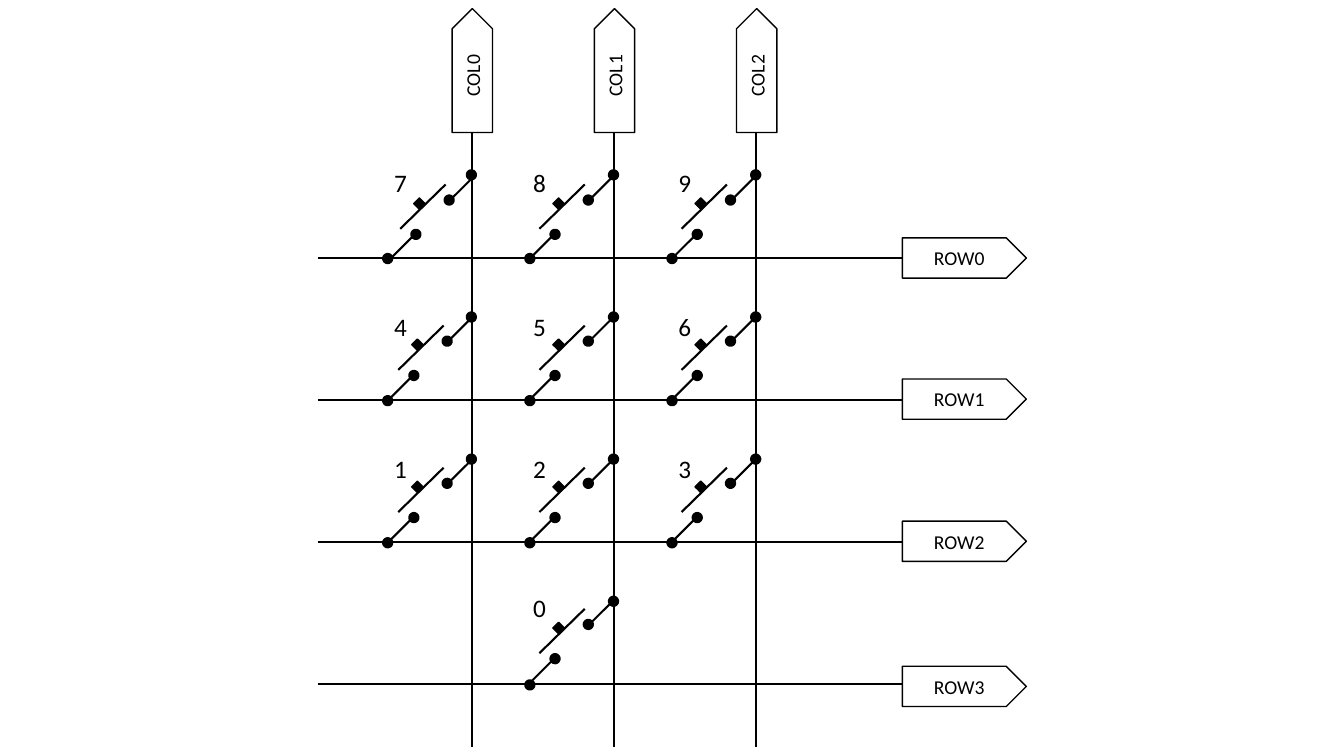
"""Build a slide with the wiring of a ten-key keypad matrix."""
import pptx
import pptx.dml.color
import pptx.enum.shapes
import pptx.enum.text
import pptx.oxml.ns
import pptx.util

PX = 9144
COLORS = {"ink": "000000"}
PITCH = 141
SWITCH_PITCH = 140.4
KEY_ROWS = ["789", "456", "123", " 0 "]
KEY_NUDGES = {"7": 3, "4": 1, "1": 1}
COLUMN_XS = [468 + PITCH * column for column in range(3)]
ROW_YS = [256 + PITCH * row for row in range(4)]
DIGIT_XS = [381, 519, 663]
DIGIT_YS = [161, 304, 445, 583]
ROW_TAG_YS = [236, 376, 517, 661]
ROW_START, ROW_END = 315, 895
COLUMN_START, COLUMN_END = 132, 741
TAG_WIDTH, TAG_HEIGHT = 123, 40
DOT, PLUNGER = 5, 8

ink = pptx.dml.color.RGBColor.from_string(COLORS["ink"])
shape_types = pptx.enum.shapes.MSO_SHAPE
deck = pptx.Presentation()
deck.slide_width, deck.slide_height = 1333 * PX, 750 * PX
slide = deck.slides.add_slide(deck.slide_layouts[6])


def write(text, frame, size, align, anchor):
    frame.word_wrap = False
    frame.vertical_anchor = anchor
    paragraph = frame.paragraphs[0]
    paragraph.alignment = align
    run = paragraph.add_run()
    run.text = text
    run.font.name = "Calibri"
    run.font.size = pptx.util.Pt(size)
    run.font.color.rgb = ink


def add_part(kind, left, top, width, height, line_width, rotation=0, filled=True):
    part = slide.shapes.add_shape(kind, left * PX, top * PX, width * PX, height * PX)
    part.shadow.inherit = False
    part.rotation = rotation
    part.line.color.rgb = ink
    part.line.width = pptx.util.Pt(line_width)
    if filled:
        part.fill.solid()
        part.fill.fore_color.rgb = ink
    else:
        part.fill.background()
    return part


wires = [(ROW_START, y, ROW_END, y) for y in ROW_YS]
wires += [(x, COLUMN_START, x, COLUMN_END) for x in COLUMN_XS]
dots, plungers, digits = [], [], []
for row, keys in enumerate(KEY_ROWS):
    for column, key in enumerate(keys):
        if key == " ":
            continue
        node_x, node_y = COLUMN_XS[column], ROW_YS[row]
        x = node_x + KEY_NUDGES.get(key, 0)
        y = ROW_YS[0] + round(SWITCH_PITCH * row)
        wires += [
            (x, y - 82, x - 25, y - 57),
            (x - 59, y - 24, x - 84, y + 1),
            (x - 29, y - 73, x - 74, y - 29),
        ]
        dots += [
            (x - 61, y - 26),
            (x - 28, y - 60),
            (node_x - 3, node_y - 85),
            (node_x - 86, node_y - 2),
        ]
        plungers.append((x - 59, y - 58))
        digits.append((key, DIGIT_XS[column], DIGIT_YS[row]))

for ends in wires:
    wire = slide.shapes.add_connector(
        pptx.enum.shapes.MSO_CONNECTOR.STRAIGHT, *[end * PX for end in ends]
    )
    wire.line.color.rgb = ink
    wire.line.width = pptx.util.Pt(1.5)
    properties = wire.element.find(pptx.oxml.ns.qn("p:spPr"))
    properties.append(pptx.oxml.parse_xml(
        f'<a:effectLst {pptx.oxml.ns.nsdecls("a")}/>'
    ))

for left, top in dots:
    add_part(shape_types.OVAL, left, top, DOT, DOT, 4.5)
for left, top in plungers:
    add_part(shape_types.RECTANGLE, left, top, PLUNGER, PLUNGER, 1, rotation=45)

tags = [(f"ROW{row}", ROW_END, y, 0) for row, y in enumerate(ROW_TAG_YS)]
tags += [(f"COL{column}", x - 61, 50, 270) for column, x in enumerate(COLUMN_XS)]
for label, left, top, rotation in tags:
    tag = add_part(shape_types.PENTAGON, left, top, TAG_WIDTH, TAG_HEIGHT, 1,
                   rotation=rotation, filled=False)
    write(label, frame=tag.text_frame, size=14,
          align=pptx.enum.text.PP_ALIGN.CENTER,
          anchor=pptx.enum.text.MSO_ANCHOR.MIDDLE)

for key, left, top in digits:
    digit = slide.shapes.add_textbox(left * PX, top * PX, 33 * PX, 40 * PX)
    write(key, frame=digit.text_frame, size=18,
          align=pptx.enum.text.PP_ALIGN.LEFT,
          anchor=pptx.enum.text.MSO_ANCHOR.TOP)

deck.save("out.pptx")
